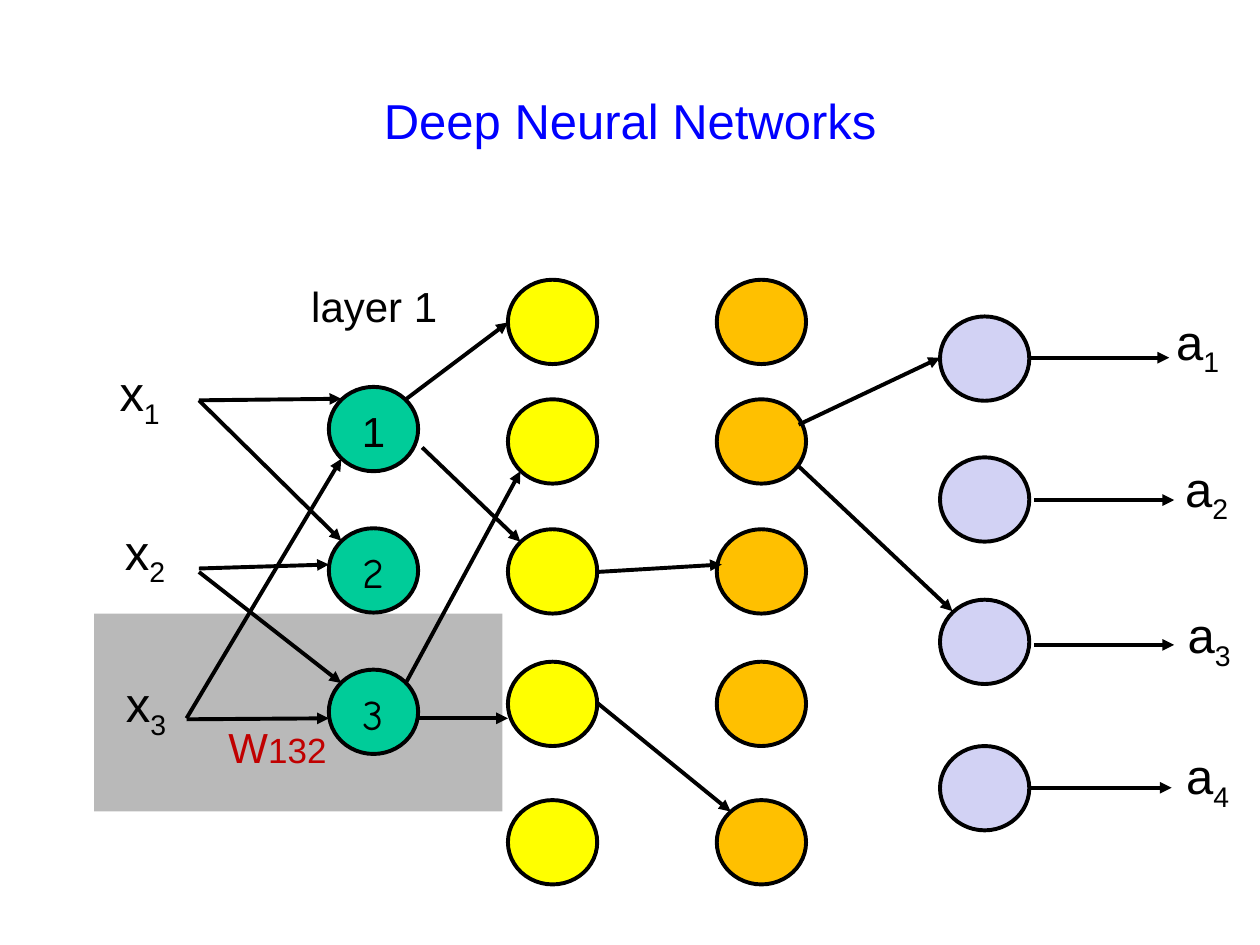
import pptx
import pptx.util
import pptx.oxml.ns
import pptx.dml.color
import pptx.enum.shapes
import pptx.enum.text
from lxml import etree

Cm, Pt = pptx.util.Cm, pptx.util.Pt
RGB = pptx.dml.color.RGBColor.from_string
KIND = pptx.enum.shapes.MSO_SHAPE
ALIGN = pptx.enum.text.PP_ALIGN
ANCHOR = pptx.enum.text.MSO_ANCHOR
qn = pptx.oxml.ns.qn

COLORS = {
    "black": "000000", "title": "0000FF", "weight": "C00000", "band": "808080",
    "green": "00CC99", "yellow": "FFFF00", "orange": "FFC000", "lilac": "D2D2F4",
}


def style(run, size, color="black", font="Arial"):
    run.font.size = Pt(size)
    run.font.name = font
    run.font.color.rgb = RGB(COLORS[color])


def label(x, y, w, h, text, size, color="black"):
    box = slide.shapes.add_textbox(Cm(x), Cm(y), Cm(w), Cm(h))
    box.text_frame.word_wrap = False
    box.text_frame.auto_size = pptx.enum.text.MSO_AUTO_SIZE.SHAPE_TO_FIT_TEXT
    para = box.text_frame.paragraphs[0]
    para.text = text
    para.alignment = ALIGN.CENTER
    style(para.runs[0], size, color)
    return para


deck = pptx.Presentation()
deck.slide_width, deck.slide_height = Cm(25.4), Cm(19.05)
slide = deck.slides.add_slide(deck.slide_layouts[5])

# Title
title = slide.shapes.title
title.left, title.top, title.width, title.height = Cm(1.9), Cm(0.84), Cm(21.6), Cm(3.17)
title.text_frame.text = "Deep Neural Networks"
title.text_frame.vertical_anchor = ANCHOR.MIDDLE
head = title.text_frame.paragraphs[0]
head.alignment = ALIGN.CENTER
style(head.runs[0], 28, "title")

# Translucent band behind the third input
band = slide.shapes.add_shape(KIND.RECTANGLE, Cm(1.9), Cm(12.37), Cm(8.23), Cm(3.99))
band.shadow.inherit = False
band.fill.solid()
band.fill.fore_color.rgb = RGB(COLORS["band"])
band.line.fill.background()
tint = band.fill._xPr.find(".//" + qn("a:srgbClr"))
etree.SubElement(tint, qn("a:alpha"), val="55000")

# Layers of nodes: left edge, colour, tops, numbers
tall = [5.64, 8.05, 10.67, 13.34, 16.13]
layers = [
    (6.63, "green", [7.8, 10.65, 13.5], "123"),
    (10.24, "yellow", tall, ""),
    (14.45, "orange", tall, ""),
    (18.95, "lilac", [6.38, 9.22, 12.09, 15.04], ""),
]
for x, color, tops, names in layers:
    for i, y in enumerate(tops):
        node = slide.shapes.add_shape(KIND.OVAL, Cm(x), Cm(y), Cm(1.8), Cm(1.7))
        node.shadow.inherit = False
        node.fill.solid()
        node.fill.fore_color.rgb = RGB(COLORS[color])
        node.line.color.rgb = RGB(COLORS["black"])
        node.line.width = Pt(2.25)
        if names:
            frame = node.text_frame
            frame.text = names[i]
            frame.vertical_anchor = ANCHOR.TOP
            frame.paragraphs[0].alignment = ALIGN.CENTER
            font = "Arial" if i == 0 else "Comic Neue"
            style(frame.paragraphs[0].runs[0], 24, font=font)

# Arrows: start x, y, end x, y
arrows = [
    # inputs to layer 1
    (4.01, 8.07, 6.88, 8.04), (4.01, 8.07, 6.88, 10.9),
    (4.01, 11.46, 6.63, 11.38), (4.01, 11.53, 6.88, 13.77),
    (3.76, 14.48, 6.88, 9.25), (3.76, 14.5, 6.63, 14.48),
    # layer 1 to layer 2
    (8.18, 8.05, 10.24, 6.5), (8.51, 9.02, 10.49, 10.92),
    (8.38, 14.48, 10.24, 14.48), (8.18, 13.77, 10.49, 9.5),
    # layer 2 to layer 3
    (12.04, 11.53, 14.55, 11.38), (12.04, 14.17, 14.73, 16.36),
    # layer 3 to layer 4
    (16.1, 8.56, 18.95, 7.21), (16.1, 9.4, 19.2, 12.32),
    # layer 4 to outputs
    (20.75, 7.21, 23.57, 7.21), (20.85, 10.08, 23.67, 10.08),
    (20.85, 13, 23.67, 13), (20.78, 15.88, 23.62, 15.88),
]
for ends in arrows:
    arrow = slide.shapes.add_connector(
        pptx.enum.shapes.MSO_CONNECTOR.STRAIGHT, *[Cm(v) for v in ends])
    arrow.line.color.rgb = RGB(COLORS["black"])
    arrow.line.width = Pt(2.25)
    etree.SubElement(arrow.line._get_or_add_ln(), qn("a:tailEnd"), type="triangle")
    etree.SubElement(arrow._element.spPr, qn("a:effectLst"))

# Inputs and outputs with subscripts
marks = [
    ("x", 1.37, [(2.13, 7.19), (2.24, 10.39), (2.26, 13.46)]),
    ("a", 1.45, [(23.42, 6.15), (23.6, 9.12), (23.65, 12.07), (23.62, 14.91)]),
]
for name, w, spots in marks:
    for i, (x, y) in enumerate(spots, 1):
        sub = label(x, y, w, 1.45, name, 28).add_run()
        sub.text = str(i)
        style(sub, 28)
        sub.font._element.set("baseline", "-25000")

# Layer and weight labels
label(5.97, 5.54, 3.15, 1.27, "layer 1", 24)
digits = label(4.34, 14.43, 2.51, 1.27, "W", 24, "weight").add_run()
digits.text = "132"
style(digits, 20, "weight")

deck.save("out.pptx")
